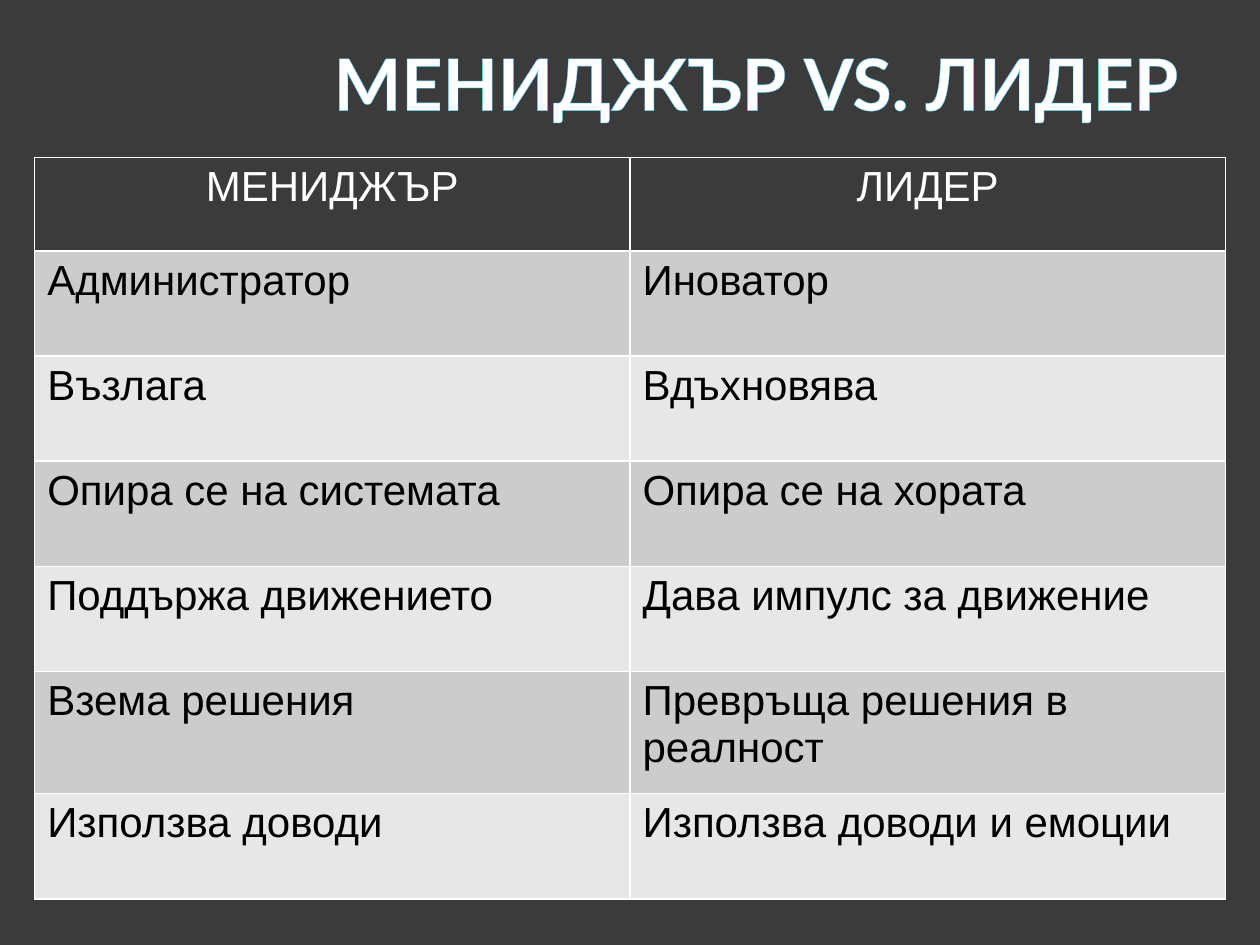
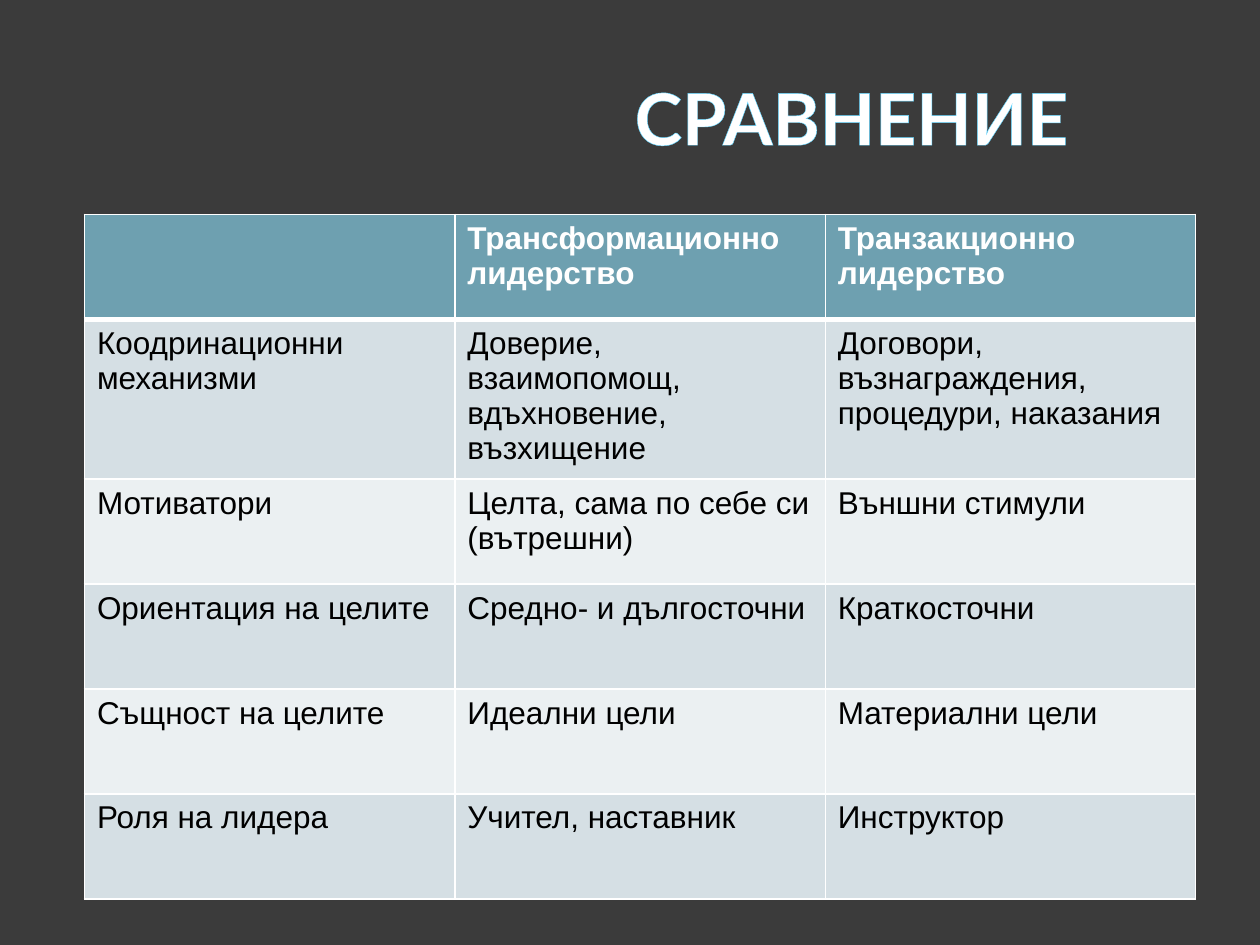
from dataclasses import dataclass

from pptx import Presentation, util as u
from pptx.dml.color import RGBColor
from pptx.enum import text
from pptx.oxml import parse_xml
from pptx.oxml.ns import nsdecls

TITLE_ONLY = 5


@dataclass(frozen=True)
class Theme:
    background: str = "3B3B3B"
    light: str = "FFFFFF"
    dark: str = "000000"
    title_outline: str = "5DD4FF"
    title_font: str = "Lato"
    body_font: str = "Arial"
    title_size: float = 41
    outline_width: float = 0.39
    grid_width: float = 1


@dataclass(frozen=True)
class TableStyle:
    header_fill: str
    bands: tuple
    size: float
    header_bold: bool
    header_align: text.PP_ALIGN
    header_rule: float


THEME = Theme()
GREY = TableStyle("3B3B3B", ("CCCCCC", "E7E7E7"), 24, False, text.PP_ALIGN.CENTER, 1)
TEAL = TableStyle("6EA0B0", ("D5DFE4", "EBF0F2"), 18, True, text.PP_ALIGN.LEFT, 3)

MANAGER_VS_LEADER = [
    ("МЕНИДЖЪР", "ЛИДЕР"),
    ("Администратор", "Иноватор"),
    ("Възлага", "Вдъхновява"),
    ("Опира се на системата", "Опира се на хората"),
    ("Поддържа движението", "Дава импулс за движение"),
    ("Взема решения", "Превръща решения в реалност"),
    ("Използва доводи", "Използва доводи и емоции"),
]
LEADERSHIP_TYPES = [
    ("", "Трансформационно лидерство", "Транзакционно лидерство"),
    ("Коодринационни механизми", "Доверие, взаимопомощ, вдъхновение, възхищение",
     "Договори, възнаграждения, процедури, наказания"),
    ("Мотиватори", "Целта, сама по себе си (вътрешни)", "Външни стимули"),
    ("Ориентация на целите", "Средно- и дългосточни", "Краткосточни"),
    ("Същност на целите", "Идеални цели", "Материални цели"),
    ("Роля на лидера", "Учител, наставник", "Инструктор"),
]


def share(percent, whole):
    return u.Emu(round(percent * whole / 100))


def place(prs, left, top, width, height):
    """Turn percentages of the slide into left, top, width and height."""
    w, h = prs.slide_width, prs.slide_height
    return share(left, w), share(top, h), share(width, w), share(height, h)


def set_attrs(obj, values):
    for name, value in values.items():
        setattr(obj, name, value)


def paint(fill, color):
    fill.solid()
    fill.fore_color.rgb = RGBColor.from_string(color)


def format_font(font, name, size, color, bold):
    set_attrs(font, {"name": name, "size": u.Pt(size), "bold": bold})
    font.color.rgb = RGBColor.from_string(color)


def line_xml(tag, color, width):
    return parse_xml(
        f'<a:{tag} {nsdecls("a")} w="{u.Pt(width)}"><a:solidFill>'
        f'<a:srgbClr val="{color}"/></a:solidFill></a:{tag}>')


def add_titled_slide(prs, title, box):
    s = prs.slides.add_slide(prs.slide_layouts[TITLE_ONLY])
    sp = s.shapes.title
    set_attrs(sp, dict(zip(("left", "top", "width", "height"), place(prs, *box))))
    tf = sp.text_frame
    set_attrs(tf, {"word_wrap": True, "auto_size": text.MSO_AUTO_SIZE.NONE,
                   "vertical_anchor": text.MSO_ANCHOR.MIDDLE})
    set_attrs(tf, {f"margin_{side}": u.Inches(0.05)
                   for side in ("left", "top", "right", "bottom")})
    p = tf.paragraphs[0]
    p.alignment = text.PP_ALIGN.RIGHT
    r = p.add_run()
    r.text = title
    format_font(r.font, THEME.title_font, THEME.title_size, THEME.light, True)
    outline = line_xml("ln", THEME.title_outline, THEME.outline_width)
    r.font._element.insert(0, outline)
    return s


def draw_borders(cell, top, bottom):
    widths = {"lnL": THEME.grid_width, "lnR": THEME.grid_width,
              "lnT": top, "lnB": bottom}
    tc_pr = cell._tc.get_or_add_tcPr()
    for i, (tag, width) in enumerate(widths.items()):
        tc_pr.insert(i, line_xml(tag, THEME.light, width))


def fill_cell(cell, words, row, style):
    header = row == 0
    paint(cell.fill, style.header_fill if header else style.bands[(row - 1) % 2])
    draw_borders(cell, style.header_rule if row == 1 else THEME.grid_width,
                 style.header_rule if header else THEME.grid_width)
    p = cell.text_frame.paragraphs[0]
    p.alignment = style.header_align if header else text.PP_ALIGN.LEFT
    if words:
        r = p.add_run()
        r.text = words
        format_font(r.font, THEME.body_font, style.size,
                    THEME.light if header else THEME.dark,
                    header and style.header_bold)


def add_comparison(prs, s, rows, style, corner, width, row_height, special_heights):
    """Add a table of equal columns; special_heights maps a row to its own height."""
    heights = [special_heights.get(i, row_height) for i in range(len(rows))]
    box = place(prs, *corner, width, sum(heights))
    table = s.shapes.add_table(len(rows), len(rows[0]), *box).table
    for i, height in enumerate(heights):
        table.rows[i].height = share(height, prs.slide_height)
        for j, words in enumerate(rows[i]):
            fill_cell(table.cell(i, j), words, i, style)


def main():
    prs = Presentation()
    set_attrs(prs, {"slide_width": u.Inches(10), "slide_height": u.Inches(7.5)})
    paint(prs.slide_master.background.fill, THEME.background)

    s = add_titled_slide(prs, "МЕНИДЖЪР VS. ЛИДЕР", (1.1, -0.13, 93, 17.6))
    add_comparison(prs, s, MANAGER_VS_LEADER, GREY, (2.75, 16.67), 94.5,
                   11.13, {0: 9.87, 5: 12.93})

    s = add_titled_slide(prs, "СРАВНЕНИЕ ", (5, 4, 81.7, 16.67))
    add_comparison(prs, s, LEADERSHIP_TYPES, TEAL, (6.7, 22.67), 88.2,
                   11.11, {1: 16.93})

    prs.save("out.pptx")


if __name__ == "__main__":
    main()
